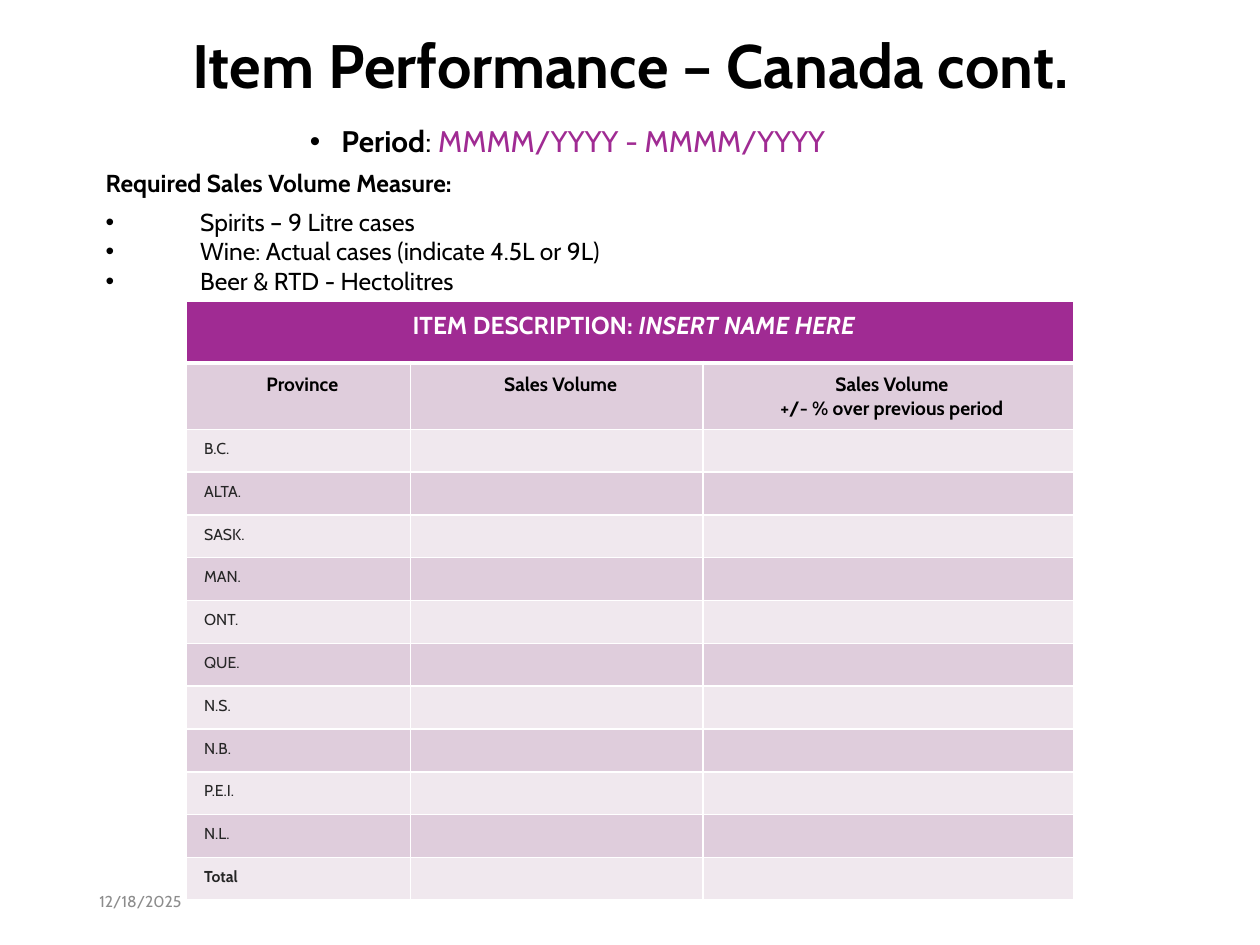
from lxml import etree
from pptx import Presentation
from pptx import util as u
from pptx.dml.color import RGBColor
from pptx.enum import text
from pptx.oxml.ns import qn

THEME = {
    "font": "Cabin",
    "black": "000000", "body": "262626", "muted": "8C8C8C", "white": "FFFFFF",
    "accent": "A02B93", "band_dark": "DFCDDC", "band_light": "F0E8EE",
    "title": 35, "period": 17, "list": 14, "column": 11, "small": 9,
}

# Content: each paragraph is a list of (words, size, colour, styles)
TITLE = [("Item Performance – Canada cont.", "title", "black", "b")]
PERIOD = [("Period", "period", "black", "b"),
          (": ", "period", "black", ""),
          ("MMMM/YYYY - MMMM/YYYY ", "period", "accent", "")]
MEASURE_HEADING = [("Required Sales Volume Measure:", "list", "black", "b")]
MEASURES = ["Spirits – 9 Litre cases",
            "Wine: Actual cases (indicate 4.5L or 9L)",
            "Beer & RTD - Hectolitres"]
DATE = [("12/18/2025", "small", "muted", "")]
ITEM = [("ITEM DESCRIPTION: ", "list", "white", "b"),
        ("INSERT NAME HERE", "list", "white", "bi")]
COLUMNS = [(1.78, ["Province"]),
           (2.32, ["Sales Volume"]),
           (2.94, ["Sales Volume", "+/- % over previous period"])]
PROVINCES = ["B.C.", "ALTA.", "SASK.", "MAN.", "ONT.", "QUE.",
             "N.S.", "N.B.", "P.E.I.", "N.L.", "Total"]
HEADER_HEIGHT, PROVINCE_HEIGHT = 0.49, 0.34
CENTER = text.PP_ALIGN.CENTER


def write(frame, paragraphs, align=None):
    """Fill a text frame and return its paragraphs."""
    for index, parts in enumerate(paragraphs):
        line = frame.paragraphs[0] if index == 0 else frame.add_paragraph()
        line.alignment = align
        for words, size, color, styles in parts:
            run = line.add_run()
            run.text = words
            run.font.name = THEME["font"]
            run.font.size = u.Pt(THEME[size])
            run.font.color.rgb = RGBColor.from_string(THEME[color])
            run.font.bold = "b" in styles
            run.font.italic = "i" in styles
    return frame.paragraphs


def add_text(slide, left, top, width, height, paragraphs, align=None):
    box = slide.shapes.add_textbox(*map(u.Inches, (left, top, width, height)))
    frame = box.text_frame
    frame.word_wrap = True
    frame.vertical_anchor = text.MSO_ANCHOR.MIDDLE
    return frame, write(frame, paragraphs, align)


def add_bullet(line, margin, indent):
    props = line._p.get_or_add_pPr()
    props.set("marL", str(u.Inches(margin)))
    props.set("indent", str(u.Inches(indent)))
    etree.SubElement(props, qn("a:buFont"), typeface="Arial")
    etree.SubElement(props, qn("a:buChar"), char="•")


def style_cell(cell, fill, bottom=1):
    cell.margin_left = u.Inches(0.14)
    cell.margin_right = cell.margin_top = cell.margin_bottom = u.Inches(0.08)
    props = cell._tc.get_or_add_tcPr()
    for side, width in (("L", 1), ("R", 1), ("T", 1), ("B", bottom)):
        edge = etree.SubElement(props, qn(f"a:ln{side}"), w=str(u.Pt(width)))
        paint = etree.SubElement(edge, qn("a:solidFill"))
        etree.SubElement(paint, qn("a:srgbClr"), val=THEME["white"])
    cell.fill.solid()
    cell.fill.fore_color.rgb = RGBColor.from_string(THEME[fill])


def add_sales_table(slide):
    heights = [HEADER_HEIGHT] * 2 + [PROVINCE_HEIGHT] * len(PROVINCES)
    widths = [width for width, _ in COLUMNS]
    table = slide.shapes.add_table(
        len(heights), len(widths), u.Inches(1.48), u.Inches(2.39),
        u.Inches(sum(widths)), u.Inches(sum(heights))).table
    for column, width in zip(table.columns, widths):
        column.width = u.Inches(width)
    for row, height in zip(table.rows, heights):
        row.height = u.Inches(height)

    # Item banner and column headings
    banner = table.cell(0, 0)
    banner.merge(table.cell(0, len(widths) - 1))
    write(banner.text_frame, [ITEM], CENTER)
    for c, (_, lines) in enumerate(COLUMNS):
        style_cell(table.cell(0, c), "accent", bottom=3)
        heading = table.cell(1, c)
        style_cell(heading, "band_dark")
        write(heading.text_frame,
              [[(words, "column", "black", "b")] for words in lines], CENTER)

    # One banded row per province, with empty cells to fill in
    for r, province in enumerate(PROVINCES, start=2):
        for c in range(len(widths)):
            cell = table.cell(r, c)
            style_cell(cell, "band_dark" if r % 2 else "band_light")
            if c:
                etree.SubElement(cell.text_frame.paragraphs[0]._p,
                                 qn("a:endParaRPr"),
                                 sz=str(THEME["small"] * 100))
        styles = "b" if province == "Total" else ""
        write(table.cell(r, 0).text_frame,
              [[(province, "small", "body", styles)]])


def main():
    deck = Presentation()
    deck.slide_width, deck.slide_height = u.Inches(10), u.Inches(7.5)
    slide = deck.slides.add_slide(deck.slide_layouts[6])

    # Title and period
    _, (title,) = add_text(slide, 0.83, 0.19, 8.35, 0.71, [TITLE], CENTER)
    title.line_spacing = 0.9
    _, (period,) = add_text(slide, 0.44, 0.8, 8.35, 0.67, [PERIOD], CENTER)
    period.line_spacing = 0.9
    period.space_after = u.Pt(6)
    add_bullet(period, 0, -0.25)

    # Volume measures
    measures = [[(words, "list", "black", "")] for words in MEASURES]
    frame, (heading, *bullets) = add_text(
        slide, 0.74, 1.62, 8.35, 0.67, [MEASURE_HEADING] + measures)
    frame.margin_bottom = u.Inches(0.22)
    heading.line_spacing = 0.7
    heading.space_after = u.Pt(6)
    for bullet in bullets:
        add_bullet(bullet, 0.75, -0.75)

    add_sales_table(slide)

    # Date
    _, (date,) = add_text(slide, 0.69, 6.95, 2.25, 0.4, [DATE])
    date.space_after = u.Pt(6)

    deck.save("out.pptx")


if __name__ == "__main__":
    main()
